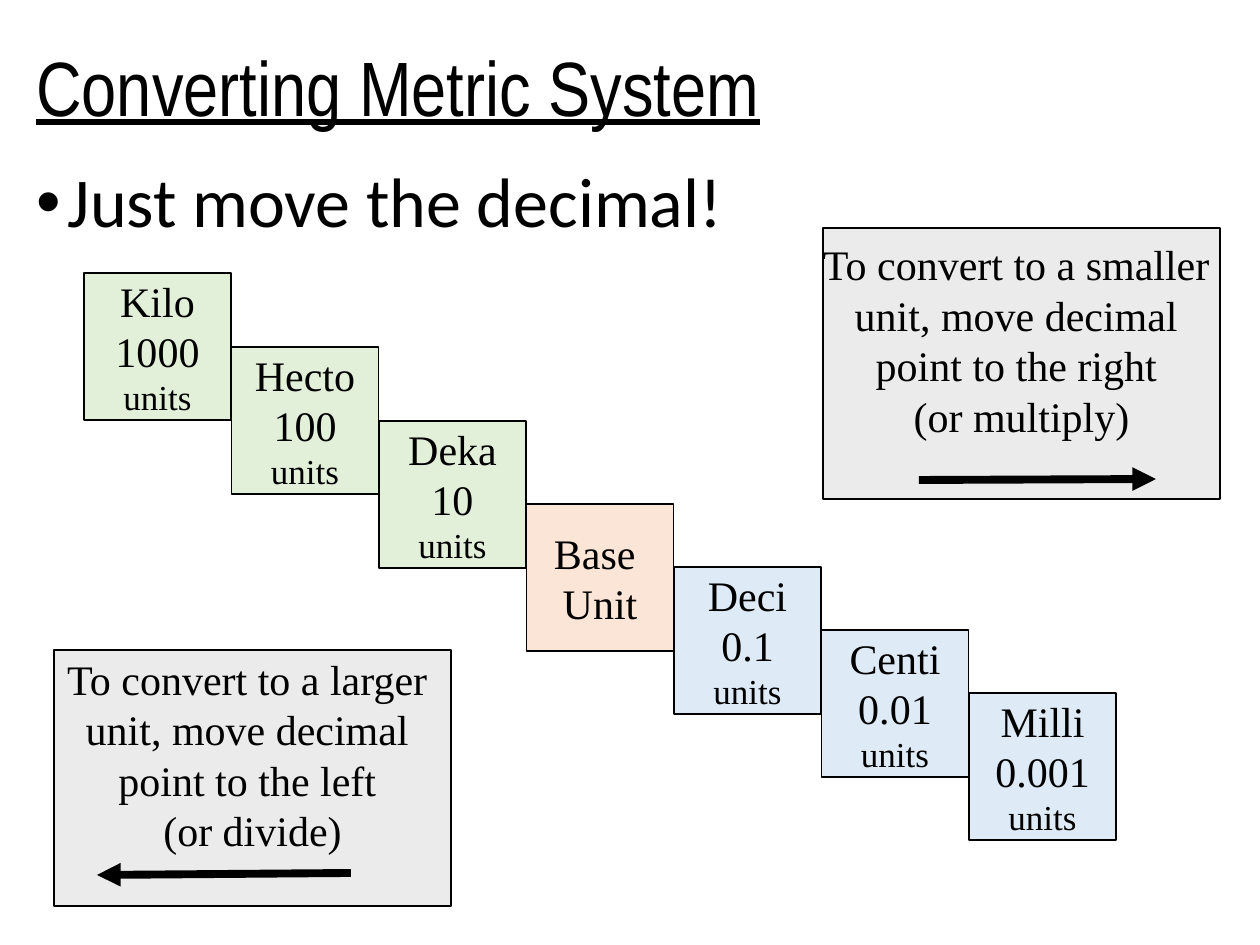
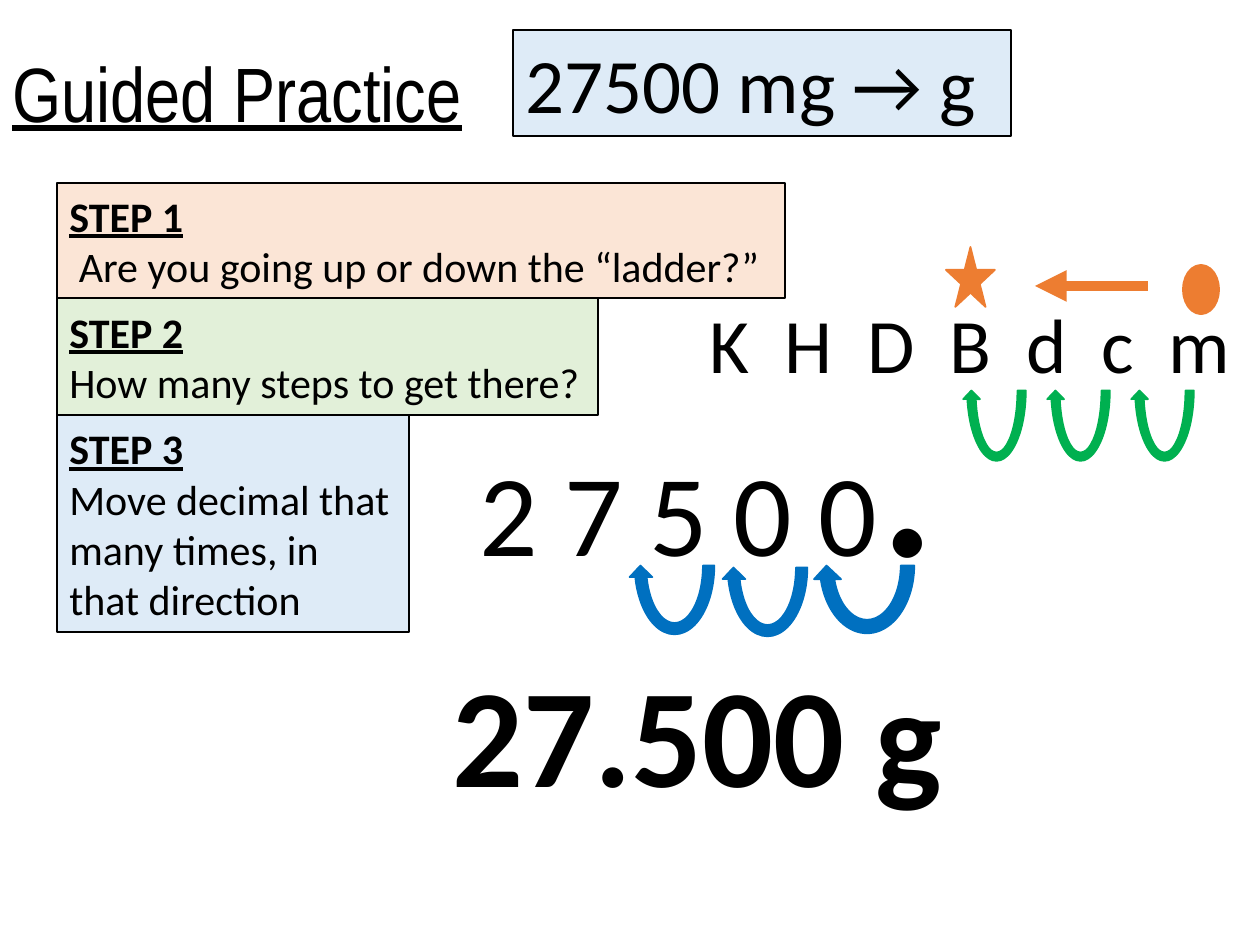
"""Build two slides on moving the decimal between metric units."""
from lxml.etree import SubElement
from pptx import Presentation
from pptx.dml.color import RGBColor
from pptx.enum.shapes import MSO_CONNECTOR, MSO_SHAPE
from pptx.enum.text import MSO_ANCHOR, PP_ALIGN
from pptx.oxml.ns import qn
from pptx.util import Emu, Pt

BLACK = RGBColor(0x00, 0x00, 0x00)
GREEN = RGBColor(0xE2, 0xF0, 0xD9)
PEACH = RGBColor(0xFB, 0xE5, 0xD6)
BLUE = RGBColor(0xDE, 0xEB, 0xF7)
GRAY = RGBColor(0xEB, 0xEB, 0xEB)
ORANGE = RGBColor(0xED, 0x7D, 0x31)
LEAF = RGBColor(0x00, 0xB0, 0x50)
OCEAN = RGBColor(0x00, 0x70, 0xC0)
HEAD, SANS, SERIF = "Arial Narrow", "Calibri", "Times New Roman"

STAIRS = [
    ("Kilo\n1000\nunits", GREEN),
    ("Hecto\n100\nunits", GREEN),
    ("Deka\n10\nunits", GREEN),
    ("Base \nUnit", PEACH),
    ("Deci\n0.1\nunits", BLUE),
    ("Centi\n0.01\nunits", BLUE),
    ("Milli\n0.001\nunits", BLUE),
]
NOTES = [
    ("To convert to a smaller \vunit, move decimal \vpoint to the right \v(or multiply)",
     (823, 228, 397, 271), (919, 480, 1156, 479)),
    ("To convert to a larger \vunit, move decimal \vpoint to the left \v(or divide)",
     (54, 650, 397, 256), (351, 873, 97, 875)),
]
STEPS = [
    ("STEP 1\n Are you going up or down the “ladder?”", 728, 115, PEACH),
    ("STEP 2\nHow many steps to get there?", 541, 117, GREEN),
    ("STEP 3\nMove decimal that many times, in that direction", 352, 217, BLUE),
]
HOPS = [(629, 491, 91), (722, 493, 91), (813, 491, 108)]


def px(num):
    return Emu(round(num * 914400 / 126))


def write(shape, text, size, font=SANS, align=PP_ALIGN.LEFT,
          anchor=MSO_ANCHOR.TOP, wrap=True):
    frame = shape.text_frame
    frame.text = text
    frame.word_wrap = wrap
    frame.vertical_anchor = anchor
    for para in frame.paragraphs:
        para.alignment = align
        for run in para.runs:
            run.font.size = Pt(size)
            run.font.name = font
            run.font.color.rgb = BLACK
    return frame


def label(slide, box, text, size, **style):
    return write(slide.shapes.add_textbox(*map(px, box)), text, size, **style)


def block(slide, kind, box, fill, edge=BLACK, width=0.75):
    shape = slide.shapes.add_shape(kind, *map(px, box))
    shape.shadow.inherit = False
    shape.fill.solid()
    shape.fill.fore_color.rgb = fill
    shape.line.color.rgb = edge
    shape.line.width = Pt(width)
    return shape


def arrow(slide, ends, color, width):
    line = slide.shapes.add_connector(MSO_CONNECTOR.STRAIGHT, *map(px, ends))
    line.line.color.rgb = color
    line.line.width = Pt(width)
    SubElement(line.line._get_or_add_ln(), qn("a:tailEnd"), type="triangle")
    SubElement(line._element.spPr, qn("a:effectLst"))


def loop(slide, box, color):
    shape = block(slide, MSO_SHAPE.CIRCULAR_ARROW, box, color, color, 1)
    shape.rotation = 180


def start(deck, title, left, top):
    slide = deck.slides.add_slide(deck.slide_layouts[6])
    frame = label(slide, (left, top, 1086, 183), title, 44,
                  font=HEAD, anchor=MSO_ANCHOR.MIDDLE)
    para = frame.paragraphs[0]
    para.line_spacing = 0.9
    para.runs[0].font.underline = True
    return slide


def ladder(deck):
    slide = start(deck, "Converting Metric System", 24, 0)
    para = label(slide, (24, 161, 1086, 600), "Just move the decimal!", 40).paragraphs[0]
    para.line_spacing = 0.9
    para.space_before = Pt(10)
    props = para._p.get_or_add_pPr()
    props.set("marL", str(Pt(18)))
    props.set("indent", str(-Pt(18)))
    SubElement(props, qn("a:buFont"), typeface="Arial")
    SubElement(props, qn("a:buChar"), char="•")

    mid = dict(font=SERIF, align=PP_ALIGN.CENTER, anchor=MSO_ANCHOR.MIDDLE, wrap=False)
    for i, (text, fill) in enumerate(STAIRS):
        top = 273 + 74 * i if i < 3 else 504 + 63 * (i - 3)
        stair = block(slide, MSO_SHAPE.RECTANGLE, (84 + 147.5 * i, top, 147, 147), fill)
        for para in write(stair, text, 24, **mid).paragraphs[2:]:
            para.runs[0].font.size = Pt(20)
    for text, box, ends in NOTES:
        note = block(slide, MSO_SHAPE.RECTANGLE, box, GRAY)
        write(note, text, 24, **mid).margin_bottom = px(54)
        arrow(slide, ends, BLACK, 4.5)


def practice(deck):
    slide = start(deck, "Guided Practice", 0, 6)
    task = block(slide, MSO_SHAPE.RECTANGLE, (513, 30, 498, 106), BLUE)
    write(task, "27500 mg → g", 44)

    top = 183
    for text, wide, high, fill in STEPS:
        step = block(slide, MSO_SHAPE.RECTANGLE, (57, top, wide, high), fill, width=1)
        frame = write(step, text, 24, anchor=MSO_ANCHOR.MIDDLE)
        font = frame.paragraphs[0].runs[0].font
        font.bold = font.underline = True
        top += high

    label(slide, (694, 290, 553, 106), "K  H  D  B  d  c  m", 44, align=PP_ALIGN.CENTER)
    block(slide, MSO_SHAPE.OVAL, (1186, 268, 30, 43), ORANGE, ORANGE, 4.5)
    block(slide, MSO_SHAPE.STAR_5_POINT, (946, 247, 49, 60), ORANGE, ORANGE, 1)
    arrow(slide, (1148, 286, 1035, 286), ORANGE, 6)
    for i in range(3):
        loop(slide, (963 + 84 * i, 316, 67, 149), LEAF)

    digits = label(slide, (408, 309, 602, 305), "2 7 5 0 0", 66, align=PP_ALIGN.CENTER)
    dot = digits.paragraphs[0].add_run()
    dot.text = "."
    dot.font.size = Pt(138)
    dot.font.name = SANS
    dot.font.color.rgb = BLACK
    for left, top, wide in HOPS:
        loop(slide, (left, top, wide, 149), OCEAN)
    answer = label(slide, (440, 641, 752, 183), "27.500 g", 80)
    answer.paragraphs[0].runs[0].font.bold = True


def main():
    deck = Presentation()
    deck.slide_width, deck.slide_height = px(1260), px(945)
    ladder(deck)
    practice(deck)
    deck.save("out.pptx")


if __name__ == "__main__":
    main()
